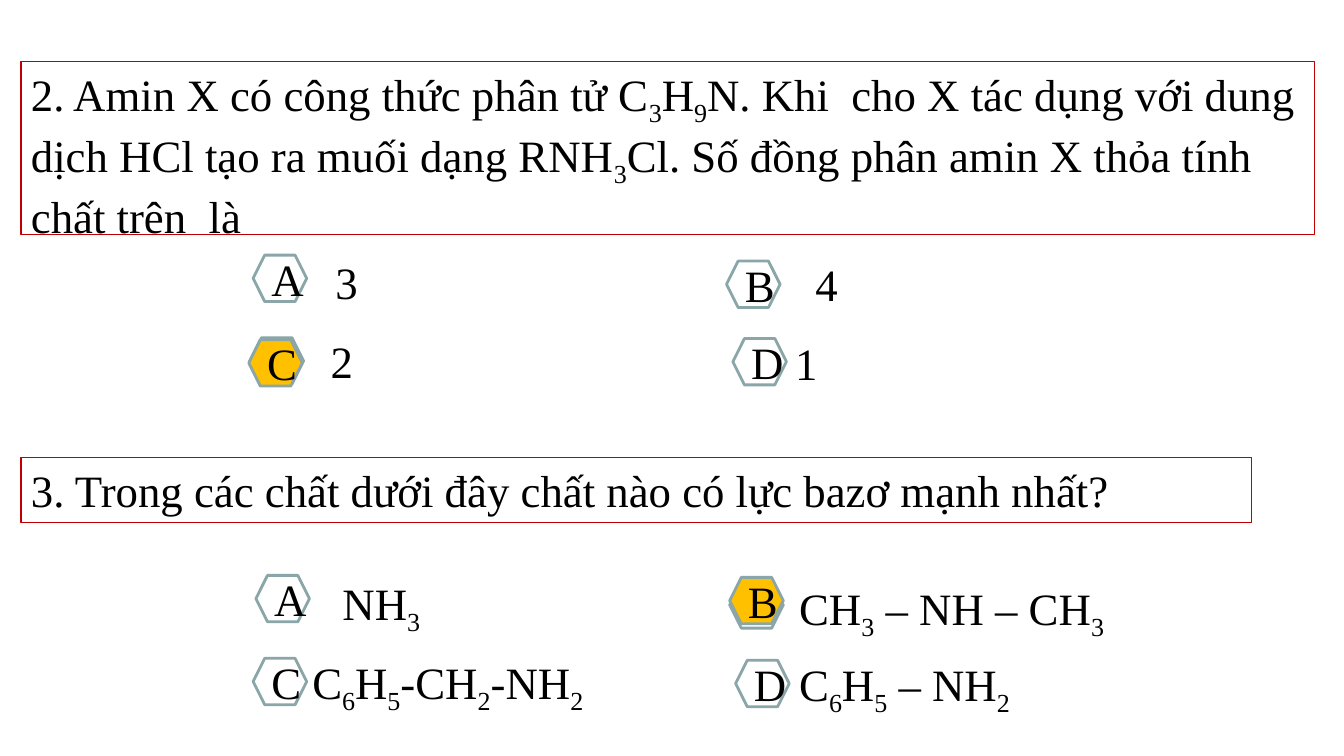
from lxml.etree import SubElement
from pptx import Presentation
from pptx.dml.color import RGBColor
from pptx.enum.shapes import MSO_SHAPE as Shape
from pptx.enum.text import MSO_ANCHOR as Anchor, MSO_AUTO_SIZE as AutoSize, PP_ALIGN as Align
from pptx.oxml.ns import qn
from pptx.util import Cm, Pt

COLORS = {"text": "000000", "frame": "C00000", "edge": "8AA6A8",
          "plain": "FFFFFF", "correct": "FFC000"}
FONT = {"name": "Times New Roman", "size": Pt(32)}
SENTENCE = {"word_wrap": True, "auto_size": AutoSize.SHAPE_TO_FIT_TEXT,
            "vertical_anchor": Anchor.TOP}
LETTER = {"word_wrap": True, "vertical_anchor": Anchor.MIDDLE}
LINE_HEIGHT = 1.63
ANSWER_WIDTH = 9
HEX_WIDTH, HEX_HEIGHT = 1.35, 1.17


def write(frame, text, layout, align):
    """Fill a text frame; every second piece between bars is a subscript."""
    for key, value in layout.items():
        setattr(frame, key, value)
    line = frame.paragraphs[0]
    line.alignment = align
    if align == Align.LEFT:
        before = SubElement(line._p.get_or_add_pPr(), qn("a:spcBef"))
        SubElement(before, qn("a:spcPct")).set("val", "50000")
    for index, piece in enumerate(text.split("|")):
        if not piece:
            continue
        run = line.add_run()
        run.text = piece
        for key, value in FONT.items():
            setattr(run.font, key, value)
        run.font.color.rgb = RGBColor.from_string(COLORS["text"])
        if index % 2:
            run.font._element.set("baseline", "-25000")


def outlined(kind, left, top, width, height, fill, line, weight):
    """Add a shape with a flat fill, or none, and a coloured outline."""
    shape = slide.shapes.add_shape(kind, Cm(left), Cm(top), Cm(width), Cm(height))
    shape.shadow.inherit = False
    if fill:
        shape.fill.solid()
        shape.fill.fore_color.rgb = RGBColor.from_string(COLORS[fill])
    else:
        shape.fill.background()
    shape.line.color.rgb = RGBColor.from_string(COLORS[line])
    shape.line.width = Pt(weight)
    return shape


deck = Presentation()
deck.slide_width, deck.slide_height = Cm(33.87), Cm(19.05)
slide = deck.slides.add_slide(deck.slide_layouts[6])

# Questions: top, width, height, text
questions = [
    (1.55, 32.61, 4.37,
     "2. Amin X có công thức phân tử C|3|H|9|N. Khi  cho X tác dụng với dung "
     "dịch HCl tạo ra muối dạng RNH|3|Cl. Số đồng phân amin X thỏa tính "
     "chất trên  là"),
    (11.53, 31.01, LINE_HEIGHT,
     "3. Trong các chất dưới đây chất nào có lực bazơ mạnh nhất?"),
]
for top, width, height, text in questions:
    question = outlined(Shape.RECTANGLE, 0.53, top, width, height, None, "frame", 0.75)
    write(question.text_frame, text, SENTENCE, Align.LEFT)

# Answers: letter, hexagon place, text place, text
answers = [
    ("A", (6.38, 6.43), (8.2, 6.3), "3"),
    ("B", (18.31, 6.58), (20.3, 6.35), "4"),
    ("C", (6.3, 8.51), (8.08, 8.28), "2"),
    ("D", (18.47, 8.53), (19.79, 8.33), "1"),
    ("A", (6.45, 14.5), (8.38, 14.38), "NH|3|"),
    ("B", (18.39, 14.66), (19.89, 14.5), "CH|3| – NH – CH|3|"),
    ("C", (6.38, 16.59), (7.62, 16.38), "C|6|H|5|-CH|2|-NH|2|"),
    ("D", (18.54, 16.64), (19.89, 16.43), "C|6|H|5| – NH|2|"),
]
# Correct answers: text and place of the gold hexagon on top
correct = {"2": (6.27, 8.56), "CH|3| – NH – CH|3|": (18.39, 14.55)}

for letter, hex_place, text_place, text in answers:
    answer = slide.shapes.add_textbox(*map(Cm, text_place), Cm(ANSWER_WIDTH), Cm(LINE_HEIGHT))
    write(answer.text_frame, text, SENTENCE, Align.LEFT)
    layers = [(hex_place, "plain")]
    if text in correct:
        layers.append((correct[text], "correct"))
    for place, fill in layers:
        marker = outlined(Shape.HEXAGON, *place, HEX_WIDTH, HEX_HEIGHT, fill, "edge", 2)
    write(marker.text_frame, letter, LETTER, Align.CENTER)

deck.save("out.pptx")
